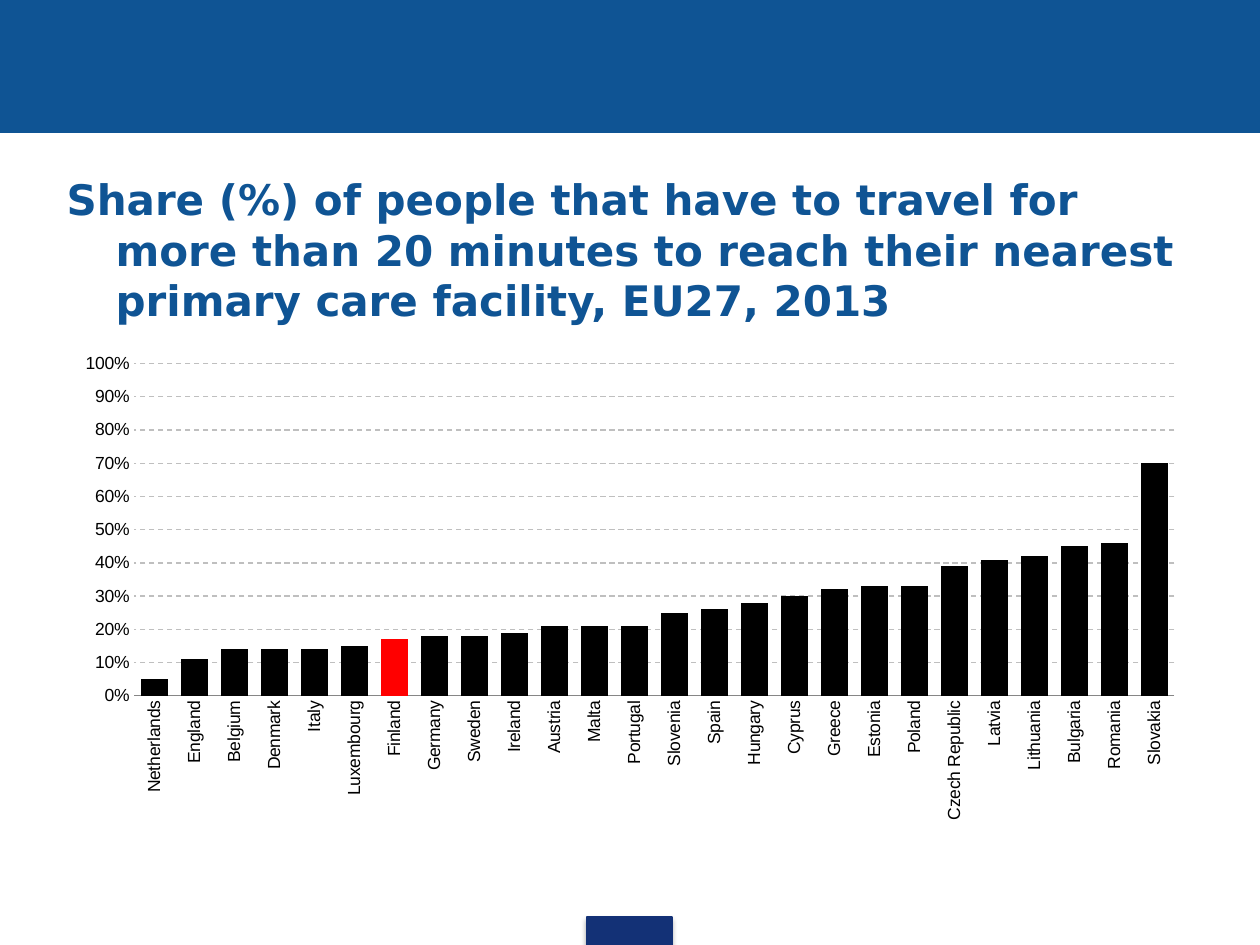
from lxml import etree
from pptx import Presentation
from pptx.chart.data import CategoryChartData
from pptx.dml.color import RGBColor
from pptx.enum.chart import XL_CHART_TYPE, XL_TICK_MARK
from pptx.enum.dml import MSO_LINE
from pptx.enum.shapes import MSO_SHAPE
from pptx.enum.text import MSO_ANCHOR, MSO_AUTO_SIZE, PP_ALIGN
from pptx.oxml.ns import qn
from pptx.util import Pt

COLUMNS = XL_CHART_TYPE.COLUMN_CLUSTERED
NO_TICK = XL_TICK_MARK.NONE
DASH = MSO_LINE.DASH
RECTANGLE = MSO_SHAPE.RECTANGLE
MIDDLE = MSO_ANCHOR.MIDDLE
NO_FIT = MSO_AUTO_SIZE.NONE
LEFT = PP_ALIGN.LEFT

EMU_PER_PX = 914400 / 126
TITLE_ONLY = 5

BLUE = RGBColor(0x0F, 0x54, 0x94)
NAVY = RGBColor(0x13, 0x31, 0x76)
BLACK = RGBColor(0, 0, 0)
RED = RGBColor(0xFF, 0, 0)
GRID_GREY = RGBColor(0xBF, 0xBF, 0xBF)
AXIS_GREY = RGBColor(0x86, 0x86, 0x86)

HEADLINE = ("Share (%) of people that have to travel for more than 20 minutes "
            "to reach their nearest primary care facility, EU27, 2013")
HIGHLIGHT = "Finland"
SHARES = {
    "Netherlands": 0.05, "England": 0.11, "Belgium": 0.14, "Denmark": 0.14,
    "Italy": 0.14, "Luxembourg": 0.15, "Finland": 0.17, "Germany": 0.18,
    "Sweden": 0.18, "Ireland": 0.19, "Austria": 0.21, "Malta": 0.21,
    "Portugal": 0.21, "Slovenia": 0.25, "Spain": 0.26, "Hungary": 0.28,
    "Cyprus": 0.3, "Greece": 0.32, "Estonia": 0.33, "Poland": 0.33,
    "Czech Republic": 0.39, "Latvia": 0.41, "Lithuania": 0.42,
    "Bulgaria": 0.45, "Romania": 0.46, "Slovakia": 0.7,
}


def px(length):
    """Turn pixels into EMU."""
    return round(length * EMU_PER_PX)


def box(*lengths):
    """Turn left, top, width and height in pixels into EMU."""
    return [px(length) for length in lengths]


def apply(target, **values):
    """Set every given attribute on the target."""
    for attribute, value in values.items():
        setattr(target, attribute, value)


def paint(part, color):
    """Give a chart part or shape a solid fill."""
    part.fill.solid()
    part.fill.fore_color.rgb = color


def add_band(slide, bounds, color):
    """Add a plain rectangle with an outline of its own colour."""
    band = slide.shapes.add_shape(RECTANGLE, *box(*bounds))
    band.shadow.inherit = False
    paint(band, color)
    band.line.color.rgb = color
    band.line.width = Pt(0.75)
    return band


def add_soft_shadow(band):
    """Cast a faint shadow straight below a band."""
    effects = band.element.spPr.find(qn("a:effectLst"))
    shadow = etree.SubElement(effects, qn("a:outerShdw"), blurRad=str(Pt(3.1)),
                              dist=str(Pt(1.8)), dir="5400000", rotWithShape="0")
    tint = etree.SubElement(shadow, qn("a:srgbClr"), val="000000")
    etree.SubElement(tint, qn("a:alpha"), val="35000")


def set_title(slide, bounds):
    """Place the headline in the title placeholder with a hanging indent."""
    title = slide.shapes.title
    apply(title, **dict(zip(("left", "top", "width", "height"), box(*bounds))))
    apply(title.text_frame, text=HEADLINE, word_wrap=True,
          auto_size=NO_FIT, vertical_anchor=MIDDLE)
    headline = title.text_frame.paragraphs[0]
    headline.alignment = LEFT
    hang = px(49)
    headline._p.get_or_add_pPr().set("marL", str(hang))
    headline._p.get_or_add_pPr().set("indent", str(-hang))
    font = headline.runs[0].font
    apply(font, name="DejaVu Sans", size=Pt(24), bold=True)
    font.color.rgb = BLUE
    slide.shapes.element.append(title.element)


def format_axes(chart):
    """Style the country axis, the percentage axis and its grid."""
    countries, percent = chart.category_axis, chart.value_axis
    for axis in (countries, percent):
        apply(axis, major_tick_mark=NO_TICK, minor_tick_mark=NO_TICK)
    countries.format.line.color.rgb = AXIS_GREY
    countries.tick_labels.font.size = Pt(10)
    labels = countries._element.find(qn("c:txPr")).find(qn("a:bodyPr"))
    labels.set("rot", "-5400000")
    labels.set("vert", "horz")
    apply(percent, minimum_scale=0, maximum_scale=1, major_unit=0.1)
    apply(percent.tick_labels, number_format="0%", number_format_is_linked=False)
    percent.format.line.fill.background()
    grid = percent.major_gridlines.format.line
    grid.color.rgb = GRID_GREY
    apply(grid, width=Pt(0.75), dash_style=DASH)


def add_share_chart(slide, bounds):
    """Add the column chart of travel shares with one country marked."""
    data = CategoryChartData(number_format="0%")
    data.categories = list(SHARES)
    data.add_series("Series 1", list(SHARES.values()))
    chart = slide.shapes.add_chart(COLUMNS, *box(*bounds), data).chart
    apply(chart, has_legend=False, has_title=False)
    apply(chart.font, name="Arial", size=Pt(10))
    chart.font.color.rgb = BLACK
    apply(chart.plots[0], gap_width=50, vary_by_categories=False)
    shares = chart.plots[0].series[0]
    paint(shares.format, BLACK)
    paint(shares.points[list(SHARES).index(HIGHLIGHT)].format, RED)
    format_axes(chart)


def main():
    """Build and save the slide."""
    deck = Presentation()
    apply(deck, slide_width=px(1260), slide_height=px(945))
    slide = deck.slides.add_slide(deck.slide_layouts[TITLE_ONLY])
    add_band(slide, (0, 0, 1260, 132), BLUE)
    add_soft_shadow(add_band(slide, (587, 917, 85, 28), NAVY))
    set_title(slide, (54, 185, 1134, 129))
    add_share_chart(slide, (63, 344, 1134, 486))
    deck.save("out.pptx")


if __name__ == "__main__":
    main()
